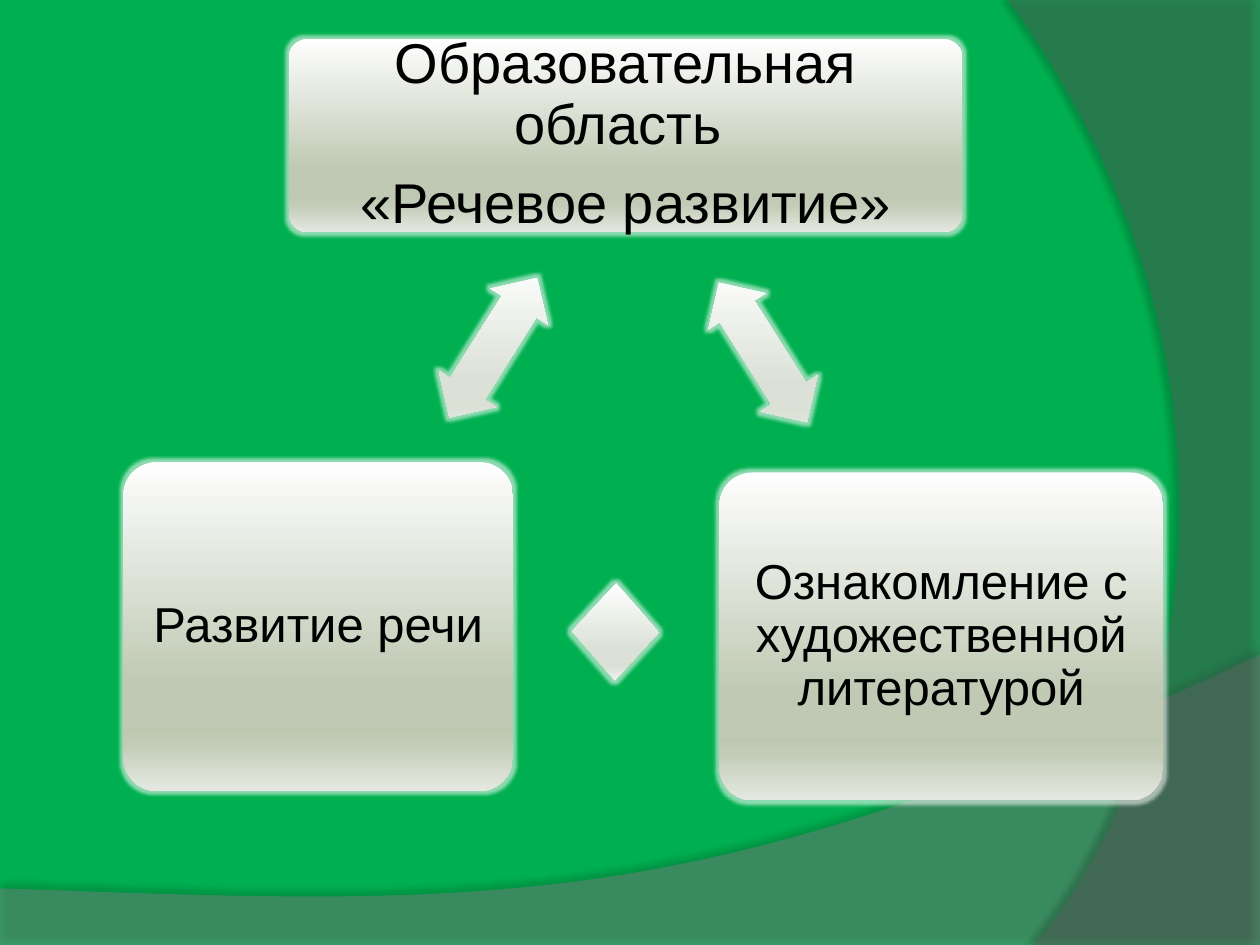
from lxml.etree import SubElement
from pptx import Presentation
from pptx.dml.color import RGBColor
from pptx.enum.shapes import MSO_SHAPE
from pptx.enum.text import MSO_ANCHOR, PP_ALIGN
from pptx.oxml.ns import qn
from pptx.util import Inches, Pt

WIDTH, HEIGHT = Inches(10), Inches(7.5)
COLORS = {"background": "00B050", "wave": "7F7F7F", "edge": "5E5E5E",
          "text": "000000", "glow": "FFFFFF", "shadow": "000000"}
STOPS = (0, 68, 81, 86, 100)
CARD_TONES = ("FEFEFE", "BFC9B3", "BDC8B1", "C3CCB8", "E5E9E1")
ARROW_TONES = ("FFFFFF", "DBE1D6", "DAE0D4", "DDE2D8", "F0F2ED")


def share(x, y):
    """Turn shares of the slide into lengths."""
    return round(x * WIDTH), round(y * HEIGHT)


def add_color(parent, color, alpha=100):
    node = SubElement(parent, qn("a:srgbClr"), val=color)
    if alpha < 100:
        SubElement(node, qn("a:alpha"), val=str(alpha * 1000))


def add_effect(shape, tag, color, alpha, **attributes):
    shape.shadow.inherit = False
    effects = shape._element.spPr.find(qn("a:effectLst"))
    add_color(SubElement(effects, qn(tag), **attributes), color, alpha)


def bezier(start, control1, control2, end, steps=60):
    """Points along a cubic curve, without its start."""
    for step in range(1, steps + 1):
        t = step / steps
        weights = ((1 - t) ** 3, 3 * t * (1 - t) ** 2, 3 * t * t * (1 - t), t ** 3)
        yield tuple(sum(w * p[axis] for w, p in
                        zip(weights, (start, control1, control2, end)))
                    for axis in (0, 1))


def add_backdrop(slide, corners, curve, color, alpha, shade, direction):
    """Translucent area bounded by straight corners and one curve."""
    points = [share(*point) for point in (*corners, *bezier(corners[-1], *curve))]
    builder = slide.shapes.build_freeform(*points[0], scale=1.0)
    builder.add_line_segments(points[1:], close=True)
    area = builder.convert_to_shape()
    area.fill.solid()
    area.fill.fore_color.rgb = RGBColor.from_string(color)
    fill_color = area._element.spPr.find(qn("a:solidFill"))[0]
    SubElement(fill_color, qn("a:alpha"), val=str(alpha * 1000))
    area.line.fill.background()
    add_effect(area, "a:outerShdw", COLORS["shadow"], shade, blurRad=str(Pt(4)),
               dist=str(Pt(4)), dir=str(direction * 60000), rotWithShape="0")


def add_glossy(slide, kind, left, top, width, height, tones):
    """Preset shape with a vertical sheen and a soft pale rim."""
    shape = slide.shapes.add_shape(kind, *share(left, top), *share(width, height))
    shape.fill.gradient()
    gradient = shape._element.spPr.find(qn("a:gradFill"))
    for child in list(gradient):
        gradient.remove(child)
    gradient.set("rotWithShape", "0")
    stops = SubElement(gradient, qn("a:gsLst"))
    for position, tone in zip(STOPS, tones):
        add_color(SubElement(stops, qn("a:gs"), pos=str(position * 1000)), tone)
    SubElement(gradient, qn("a:lin"), ang="5400000", scaled="0")
    shape.line.fill.background()
    add_effect(shape, "a:glow", COLORS["glow"], 55, rad=str(Pt(4)))
    return shape


def add_card(slide, box, lines, size, inset):
    card = add_glossy(slide, MSO_SHAPE.ROUNDED_RECTANGLE, *box, CARD_TONES)
    card.adjustments[0] = 0.1
    frame = card.text_frame
    frame.word_wrap = True
    frame.vertical_anchor = MSO_ANCHOR.MIDDLE
    frame.margin_left = frame.margin_right = Inches(inset)
    frame.margin_top = frame.margin_bottom = Inches(inset)
    for index, line in enumerate(lines):
        paragraph = frame.add_paragraph() if index else frame.paragraphs[0]
        paragraph.alignment = PP_ALIGN.CENTER
        paragraph.line_spacing = 0.9
        paragraph.space_after = Pt(round(size * 0.35))
        run = paragraph.add_run()
        run.text = line
        run.font.name = "Arial"
        run.font.size = Pt(size)
        run.font.color.rgb = RGBColor.from_string(COLORS["text"])


def add_arrow(slide, box, rotation):
    arrow = add_glossy(slide, MSO_SHAPE.LEFT_RIGHT_ARROW, *box, ARROW_TONES)
    arrow.adjustments[0], arrow.adjustments[1] = 0.6, 0.5
    arrow.rotation = rotation


def main():
    deck = Presentation()
    deck.slide_width, deck.slide_height = WIDTH, HEIGHT
    slide = deck.slides.add_slide(deck.slide_layouts[6])
    slide.background.fill.solid()
    slide.background.fill.fore_color.rgb = RGBColor.from_string(COLORS["background"])

    # Waves at the bottom and the right edge
    add_backdrop(slide, [(0, 0.94), (0, 1), (1, 1), (1, 0.693)],
                 [(0.559, 0.972), (0.391, 0.959), (0, 0.94)],
                 COLORS["wave"], 45, 35, 270)
    add_backdrop(slide, [(1, 0), (1, 1), (0.821, 1)],
                 [(0.935, 0.825), (1.018, 0.4), (0.8, 0)],
                 COLORS["edge"], 40, 45, 180)

    # Educational area and its two parts
    add_card(slide, (0.229, 0.041, 0.535, 0.205),
             ["Образовательная область ", "«Речевое развитие»"], 32, 0.13)
    add_card(slide, (0.571, 0.5, 0.352, 0.347),
             ["Ознакомление с художественной литературой"], 28, 0.12)
    add_card(slide, (0.098, 0.489, 0.309, 0.348), ["Развитие речи"], 28, 0.12)

    # Two-way links between the cards
    add_arrow(slide, (0.54, 0.337, 0.131, 0.072), 57.8)
    add_arrow(slide, (0.454, 0.617, 0.069, 0.103), 180.8)
    add_arrow(slide, (0.326, 0.332, 0.131, 0.072), 302.1)

    deck.save("out.pptx")


if __name__ == "__main__":
    main()
